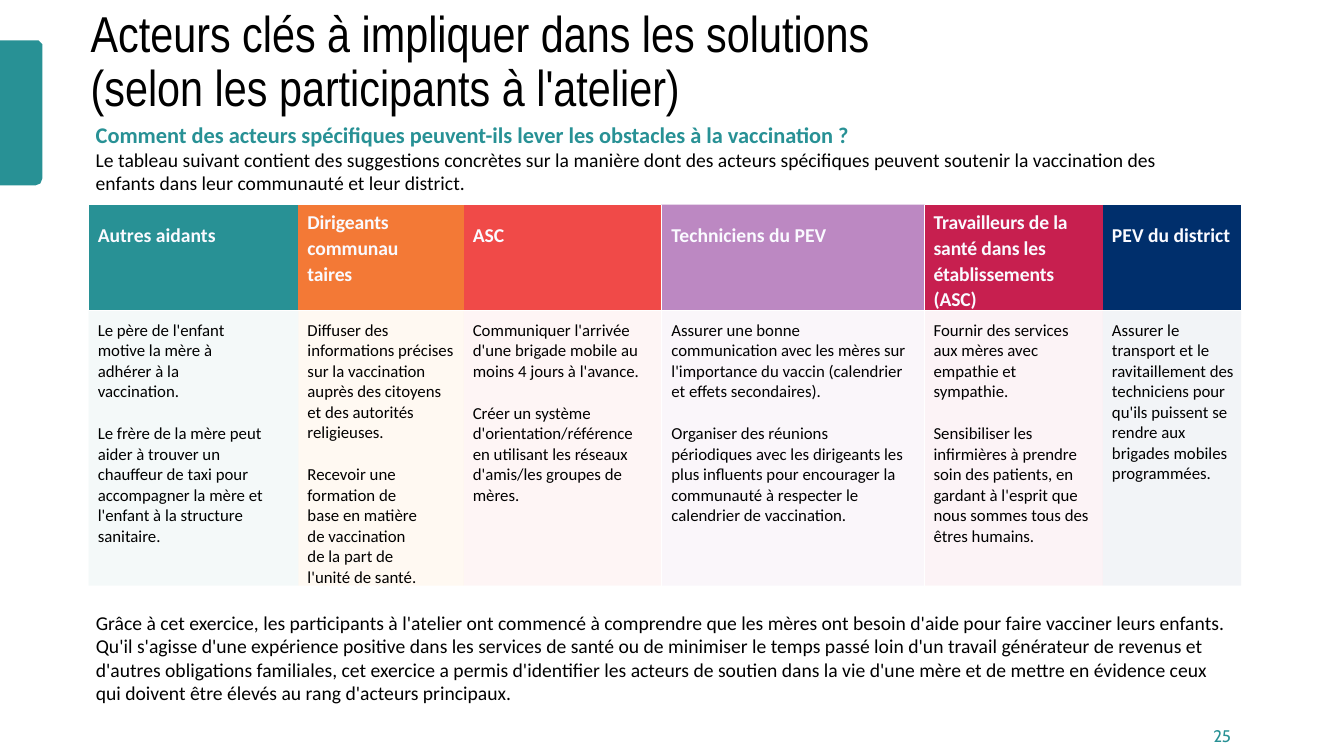
from dataclasses import dataclass
from typing import Optional

from lxml import etree
from pptx import Presentation, util as u
from pptx.dml.color import RGBColor
from pptx.enum import text
from pptx.oxml import ns


@dataclass(frozen=True)
class Theme:
    teal: str = "289195"
    black: str = "000000"
    white: str = "FFFFFF"
    header_text: str = "FAFAFF"
    title_font: str = "Arial Narrow"
    body_font: str = "Calibri"
    number_font: str = "Cabin"
    title: float = 36
    question: float = 16
    body: float = 14
    small: float = 12


@dataclass(frozen=True)
class Para:
    text: str
    size: float
    color: str = "000000"
    font: str = "Calibri"
    bold: bool = False
    before: float = 0
    right: float = 0
    line: Optional[float] = None
    align: Optional[text.PP_ALIGN] = None
    spacing: int = 0


@dataclass(frozen=True)
class Actor:
    name: str
    width: float
    color: str
    tint: str
    actions: tuple[tuple[str, float], ...]  # wording, right indent
    left: float = 0.09
    alpha: int = 100
    tint_alpha: int = 5
    tall: bool = False
    name_right: float = 0
    edges: str = ""


T = Theme()
ACTORS = [
    Actor("Autres aidants", 2.08, T.teal, T.teal, (
        ("Le père de l'enfant motive la mère à adhérer à la vaccination.", 0.5),
        ("Le frère de la mère peut aider à trouver un chauffeur de taxi pour "
         "accompagner la mère et l'enfant à la structure sanitaire.", 0.3))),
    Actor("Dirigeants communautaires", 1.64, "F37936", "FFC075", (
        ("Diffuser des informations précises sur la vaccination auprès des "
         "citoyens et des autorités religieuses.", 0.05),
        ("Recevoir une formation de base en matière de vaccination de la part "
         "de l'unité de santé.", 0.42)),
        tint_alpha=9, tall=True, name_right=0.59),
    Actor("ASC", 1.96, "F04A48", "F04A48", (
        ("Communiquer l'arrivée d'une brigade mobile au moins 4 jours à "
         "l'avance.", 0.15),
        ("Créer un système d'orientation/référence en utilisant les réseaux "
         "d'amis/les groupes de mères.", 0.15)), edges="R"),
    Actor("Techniciens du PEV", 2.61, "9E53A8", "9E53A8", (
        ("Assurer une bonne communication avec les mères sur l'importance du "
         "vaccin (calendrier et effets secondaires).", 0.18),
        ("Organiser des réunions périodiques avec les dirigeants les plus "
         "influents pour encourager la communauté à respecter le calendrier "
         "de vaccination.", 0.18)), left=0.1, alpha=69, edges="LR"),
    Actor("Travailleurs de la santé dans les établissements (ASC)", 1.77,
          "C71F4F", "C71F4F", (
        ("Fournir des services aux mères avec empathie et sympathie.", 0.27),
        ("Sensibiliser les infirmières à prendre soin des patients, en gardant "
         "à l'esprit que nous sommes tous des êtres humains.", 0.05)),
        tall=True, name_right=0.15),
    Actor("PEV du district", 1.37, "002F6C", "002F6C", (
        ("Assurer le transport et le ravitaillement des techniciens pour "
         "qu'ils puissent se rendre aux brigades mobiles programmées.", 0.05),)),
]


def write(tf, paras: list[Para]) -> None:
    for i, item in enumerate(paras):
        p = tf.paragraphs[0] if i == 0 else tf.add_paragraph()
        p.text = item.text
        p.space_before = u.Pt(item.before)
        if item.line:
            p.line_spacing = item.line
        if item.align:
            p.alignment = item.align
        if item.right:
            p._p.get_or_add_pPr().set("marR", str(u.Inches(item.right)))
        r = p.runs[0]
        r.font.name, r.font.size, r.font.bold = item.font, u.Pt(item.size), item.bold
        r.font.color.rgb = RGBColor.from_string(item.color)
        if item.spacing:
            r._r.get_or_add_rPr().set("spc", str(item.spacing))


def add_text(s, box: tuple, top: float, paras: list[Para]) -> None:
    tf = s.shapes.add_textbox(*map(u.Inches, box)).text_frame
    tf.word_wrap = True
    tf.margin_left = tf.margin_right = tf.margin_bottom = 0
    tf.margin_top = u.Inches(top)
    write(tf, paras)


def style_cell(cell, color: str, alpha: int, edges: str, left: float, top: float) -> None:
    tcPr = cell._tc.get_or_add_tcPr()
    for side in (e for e in "LRTB" if e in edges):
        ln = etree.SubElement(tcPr, ns.qn(f"a:ln{side}"), w=str(u.Pt(0.75)))
        line_fill = etree.SubElement(ln, ns.qn("a:solidFill"))
        etree.SubElement(line_fill, ns.qn("a:srgbClr"), val=T.white)
    cell.fill.solid()
    cell.fill.fore_color.rgb = RGBColor.from_string(color)
    if alpha < 100:
        clr = tcPr.find(ns.qn("a:solidFill")).find(ns.qn("a:srgbClr"))
        etree.SubElement(clr, ns.qn("a:alpha"), val=str(alpha * 1000))
    cell.margin_left, cell.margin_top = u.Inches(left), u.Inches(top)
    cell.margin_right = cell.margin_bottom = 0


def add_actor_table(s) -> None:
    width = sum(a.width for a in ACTORS)
    table = s.shapes.add_table(2, len(ACTORS), u.Inches(0.88), u.Inches(2.03),
                               u.Inches(width), u.Inches(3.78)).table
    table.first_row = table.horz_banding = False
    # Plain table style without grid
    style_id = table._tbl.tblPr.find(ns.qn("a:tableStyleId"))
    style_id.text = "{2D5ABB26-0587-4C30-8999-92F81FD0307C}"
    for row, height in zip(table.rows, (1.05, 2.73)):
        row.height = u.Inches(height)
    for i, a in enumerate(ACTORS):
        table.columns[i].width = u.Inches(a.width)
        head, body = table.cell(0, i), table.cell(1, i)
        style_cell(head, a.color, a.alpha, a.edges + "B", a.left, 0.05 if a.tall else 0.19)
        write(head.text_frame, [Para(a.name, T.body, T.header_text, bold=True,
                                     right=a.name_right, line=1.07 if a.tall else None,
                                     spacing=-10 if a.tall else 0)])
        style_cell(body, a.tint, a.tint_alpha, a.edges + "T", a.left, 0.1)
        write(body.text_frame, [Para(words, T.small, right=right, before=15.3 * (n > 0))
                                for n, (words, right) in enumerate(a.actions)])


def add_side_tab(s) -> None:
    outline = [(0, 1.84), (0, 0.4), (0.35, 0.4), (0.38, 0.4), (0.4, 0.42),
               (0.42, 0.44), (0.42, 0.47), (0.42, 1.77), (0.4, 1.82)]
    fb = s.shapes.build_freeform(u.Inches(0.35), u.Inches(1.84))
    fb.add_line_segments([(u.Inches(x), u.Inches(y)) for x, y in outline], close=True)
    sp = fb.convert_to_shape()
    sp.shadow.inherit = False
    sp.fill.solid()
    sp.fill.fore_color.rgb = RGBColor.from_string(T.teal)
    sp.line.fill.background()


def main() -> None:
    prs = Presentation()
    prs.slide_width, prs.slide_height = u.Inches(13.33), u.Inches(7.5)
    s = prs.slides.add_slide(prs.slide_layouts[6])
    add_side_tab(s)
    # Title
    add_text(s, (0.9, 0, 7.77, 1.17), 0.08, [
        Para("Acteurs clés à impliquer dans les solutions (selon les participants "
             "à l'atelier)", T.title, font=T.title_font, line=u.Pt(38.9))])
    # Closing remark and page number
    add_text(s, (0.95, 6.05, 12.01, 1.16), 0.01, [
        Para("Grâce à cet exercice, les participants à l'atelier ont commencé à comprendre "
             "que les mères ont besoin d'aide pour faire vacciner leurs enfants. Qu'il "
             "s'agisse d'une expérience positive dans les services de santé ou de minimiser "
             "le temps passé loin d'un travail générateur de revenus et d'autres obligations "
             "familiales, cet exercice a permis d'identifier les acteurs de soutien dans la "
             "vie d'une mère et de mettre en évidence ceux qui doivent être élevés au rang "
             "d'acteurs principaux.", T.body, right=0.75),
        Para("25", T.small, T.teal, T.number_font, before=15,
             align=text.PP_ALIGN.RIGHT, spacing=-20)])
    add_actor_table(s)
    # Question and introduction
    add_text(s, (0.95, 1.19, 10.86, 0.53), 0.01, [
        Para("Comment des acteurs spécifiques peuvent-ils lever les obstacles à la "
             "vaccination ?", T.question, T.teal, bold=True),
        Para("Le tableau suivant contient des suggestions concrètes sur la manière dont des "
             "acteurs spécifiques peuvent soutenir la vaccination des enfants dans leur "
             "communauté et leur district.", T.body)])
    prs.save("out.pptx")


if __name__ == "__main__":
    main()
